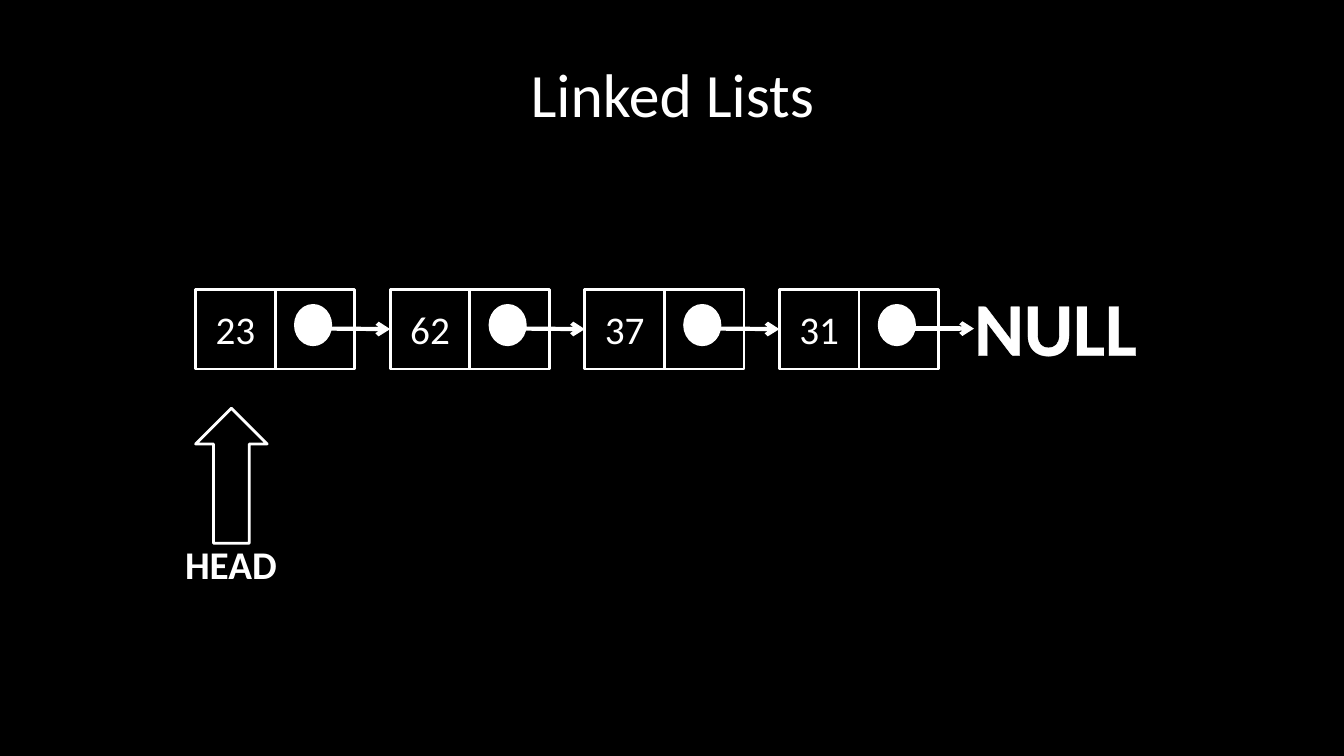
from lxml.etree import SubElement
from pptx import Presentation
from pptx.dml.color import RGBColor
from pptx.enum.shapes import MSO_CONNECTOR, MSO_SHAPE
from pptx.enum.text import MSO_ANCHOR, MSO_AUTO_SIZE, PP_ALIGN
from pptx.oxml import parse_xml
from pptx.oxml.ns import nsdecls, qn
from pptx.util import Pt

PX = 9144
WHITE, BLACK = "FFFFFF", "000000"
VALUES = ["23", "62", "37", "31"]
LEFT, TOP, CELL, STEP = 194, 287, 79, 193


def emu(*sizes):
    """Turn px lengths into EMU."""
    return [size * PX for size in sizes]


def paint(color, code):
    """Set a fill, line or font colour from a hex string."""
    color.rgb = RGBColor.from_string(code)


def write(shape, text, size, bold=False):
    """Put centred white text into a shape."""
    frame = shape.text_frame
    frame.text = text
    para = frame.paragraphs[0]
    para.alignment = PP_ALIGN.CENTER
    font = para.runs[0].font
    font.name, font.size, font.bold = "Calibri", Pt(size), bold
    paint(font.color, WHITE)


def add_shape(slide, kind, box, fill=None):
    """Add a white-edged preset shape."""
    shape = slide.shapes.add_shape(kind, *emu(*box))
    shape.shadow.inherit = False
    if fill:
        shape.fill.solid()
        paint(shape.fill.fore_color, fill)
    else:
        shape.fill.background()
    paint(shape.line.color, WHITE)
    shape.line.width = Pt(2)
    return shape


def add_label(slide, box, text, size, bold=False):
    """Add a text box that grows with its single line."""
    label = slide.shapes.add_textbox(*emu(*box))
    write(label, text, size, bold)
    label.text_frame.word_wrap = False
    label.text_frame.auto_size = MSO_AUTO_SIZE.SHAPE_TO_FIT_TEXT
    return label


def add_title(slide, text):
    """Add the slide title, centred in its band."""
    title = slide.shapes.add_textbox(*emu(67, 30, 1200, 125))
    write(title, text, 44)
    title.text_frame.word_wrap = True
    title.text_frame.vertical_anchor = MSO_ANCHOR.MIDDLE


def add_link(slide, start, end, y):
    """Add a level arrow to the next node."""
    link = slide.shapes.add_connector(
        MSO_CONNECTOR.STRAIGHT, *emu(start, y, end, y))
    paint(link.line.color, WHITE)
    link.line.width = Pt(3)
    props = link._element.spPr
    SubElement(props.get_or_add_ln(), qn("a:tailEnd"), type="arrow")
    SubElement(props, qn("a:effectLst"))
    return link


def add_node(slide, left, value):
    """Add a value cell, a pointer cell and its link."""
    cell = add_shape(slide, MSO_SHAPE.RECTANGLE, (left, TOP, CELL, CELL))
    write(cell, value, 28)
    add_shape(slide, MSO_SHAPE.OVAL, (left + 99, 303, 35, 39), WHITE)
    link = add_link(slide, left + 134, left + STEP, TOP + CELL // 2)
    add_shape(slide, MSO_SHAPE.RECTANGLE, (left + CELL, TOP, CELL, CELL))
    return cell, link


def outline(label):
    """Give the text of a label a white outline."""
    run = label.text_frame.paragraphs[0].runs[0]
    run._r.get_or_add_rPr().insert(0, parse_xml(
        f'<a:ln {nsdecls("a")} w="17780"><a:solidFill>'
        f'<a:srgbClr val="{WHITE}"/></a:solidFill></a:ln>'))


def main():
    """Build the linked list slide."""
    deck = Presentation()
    deck.slide_width, deck.slide_height = emu(1333, 750)
    slide = deck.slides.add_slide(deck.slide_layouts[6])
    slide.background.fill.solid()
    paint(slide.background.fill.fore_color, BLACK)
    add_title(slide, "Linked Lists")
    last = None
    for index, value in enumerate(VALUES):
        cell, link = add_node(slide, LEFT + index * STEP, value)
        if last:
            last.end_connect(cell, 1)
        last = link
    outline(add_label(slide, (955, 273, 184, 101), "NULL", 54, True))
    add_shape(slide, MSO_SHAPE.UP_ARROW, (LEFT, 405, 71, 134), BLACK)
    add_label(slide, (173, 531, 112, 57), "HEAD", 28, True)
    deck.save("out.pptx")


if __name__ == "__main__":
    main()
